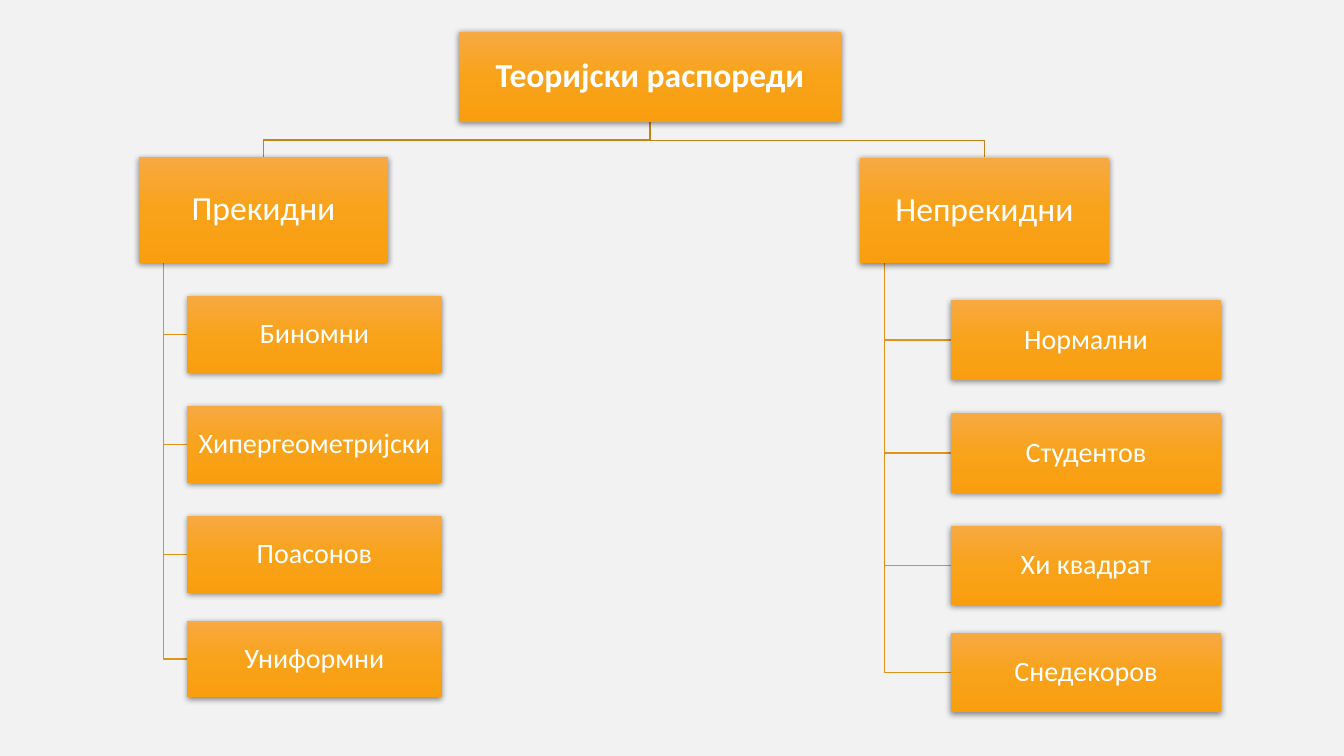
from copy import deepcopy
from dataclasses import dataclass

from lxml.etree import SubElement
from pptx import Presentation
from pptx.dml.color import RGBColor as RGB
from pptx.enum.shapes import MSO_SHAPE as SHAPE
from pptx.enum.text import MSO_ANCHOR as ANCHOR, PP_ALIGN as ALIGN
from pptx.oxml.ns import qn
from pptx.util import Pt


@dataclass(frozen=True)
class Theme:
    font: str = "Calibri"
    heading_size: float = 24
    leaf_size: float = 20
    background: str = "F2F2F2"
    text: str = "FFFFFF"
    trunk_line: str = "C58217"
    leaf_line: str = "DF931A"
    shadow: str = "000000"
    gradient: tuple[str, ...] = ("F7A942", "F9A31A", "F99E0F")
    line_width: float = 1


@dataclass(frozen=True)
class Box:
    text: str
    left: float
    top: float
    width: float
    height: float

    @property
    def center(self) -> float:
        return self.left + self.width / 2

    @property
    def middle(self) -> float:
        return self.top + self.height / 2

    @property
    def bottom(self) -> float:
        return self.top + self.height


@dataclass(frozen=True)
class Branch:
    head: Box
    leaves: list[Box]


THEME = Theme()
STEM_INDENT = 17.5

ROOT = Box("Теоријски распореди", 327.7, 22.5, 273, 64.5)
BRANCHES = [
    Branch(
        Box("Прекидни", 99.2, 112, 178, 75.6),
        [Box(text, 133.7, top, 181.8, 54.7) for text, top in (
            ("Биномни", 211.7), ("Хипергеометријски", 290.2),
            ("Поасонов", 368.6), ("Униформни", 443.5))],
    ),
    Branch(
        Box("Непрекидни", 614.2, 112.5, 178, 75.6),
        [Box(text, 679, top, 193.5, 56.7) for text, top in (
            ("Нормални", 214.6), ("Студентов", 295.2),
            ("Хи квадрат", 375.5), ("Снедекоров", 452.2))],
    ),
]


def add_polyline(slide, points: list[tuple[float, float]], color: str) -> None:
    (x, y), *rest = [(Pt(px), Pt(py)) for px, py in points]
    builder = slide.shapes.build_freeform(x, y)
    builder.add_line_segments(rest, close=False)
    sp = builder.convert_to_shape()
    sp.shadow.inherit = False
    sp.fill.background()
    sp.line.color.rgb = RGB.from_string(color)
    sp.line.width = Pt(THEME.line_width)


def fill_gradient(sp) -> None:
    """Fill from top to bottom with evenly spaced theme colours."""
    sp.fill.gradient()
    sp.fill.gradient_angle = 270
    stop_list = sp._element.spPr.find(".//" + qn("a:gsLst"))
    while len(stop_list) < len(THEME.gradient):
        stop_list.append(deepcopy(stop_list[-1]))
    for i, (stop, color) in enumerate(zip(sp.fill.gradient_stops, THEME.gradient)):
        stop.position = i / (len(THEME.gradient) - 1)
        stop.color.rgb = RGB.from_string(color)


def add_shadow(sp) -> None:
    sp.shadow.inherit = False
    effects = sp._element.spPr.find(qn("a:effectLst"))
    shadow = SubElement(effects, qn("a:outerShdw"), blurRad=str(Pt(4.4)),
                        dist=str(Pt(1.2)), dir="5400000", rotWithShape="0")
    color = SubElement(shadow, qn("a:srgbClr"), val=THEME.shadow)
    SubElement(color, qn("a:alpha"), val="45000")


def set_text(sp, text: str, *, size: float, bold: bool = False,
             inset: float = 1) -> None:
    tf = sp.text_frame
    tf.word_wrap = True
    tf.vertical_anchor = ANCHOR.MIDDLE
    tf.margin_left = tf.margin_right = Pt(inset)
    tf.margin_top = tf.margin_bottom = Pt(inset)
    p = tf.paragraphs[0]
    p.alignment = ALIGN.CENTER
    p.line_spacing = 0.9
    r = p.add_run()
    r.text = text
    r.font.name = THEME.font
    r.font.size = Pt(size)
    r.font.bold = bold
    r.font.color.rgb = RGB.from_string(THEME.text)


def add_box(slide, box: Box, **text_format) -> None:
    sp = slide.shapes.add_shape(SHAPE.RECTANGLE, Pt(box.left), Pt(box.top),
                                Pt(box.width), Pt(box.height))
    fill_gradient(sp)
    sp.line.fill.background()
    add_shadow(sp)
    set_text(sp, box.text, **text_format)


def add_branch_lines(slide, branch: Branch) -> None:
    head = branch.head
    stem = head.left + STEM_INDENT
    for leaf in reversed(branch.leaves):
        add_polyline(slide, [(stem, head.bottom), (stem, leaf.middle),
                             (leaf.left, leaf.middle)], THEME.leaf_line)
    bend = (ROOT.bottom + head.top) / 2 + 0.5
    add_polyline(slide, [(ROOT.center, ROOT.bottom), (ROOT.center, bend),
                         (head.center, bend), (head.center, head.top)],
                 THEME.trunk_line)


def main() -> None:
    prs = Presentation()
    prs.slide_width, prs.slide_height = Pt(960), Pt(540)
    slide = prs.slides.add_slide(prs.slide_layouts[6])
    background = slide.background.fill
    background.solid()
    background.fore_color.rgb = RGB.from_string(THEME.background)

    for branch in reversed(BRANCHES):
        add_branch_lines(slide, branch)
    add_box(slide, ROOT, size=THEME.heading_size, bold=True, inset=1.2)
    for branch in BRANCHES:
        add_box(slide, branch.head, size=THEME.heading_size, inset=1.2)
        for leaf in branch.leaves:
            add_box(slide, leaf, size=THEME.leaf_size)
    prs.save("out.pptx")


if __name__ == "__main__":
    main()
